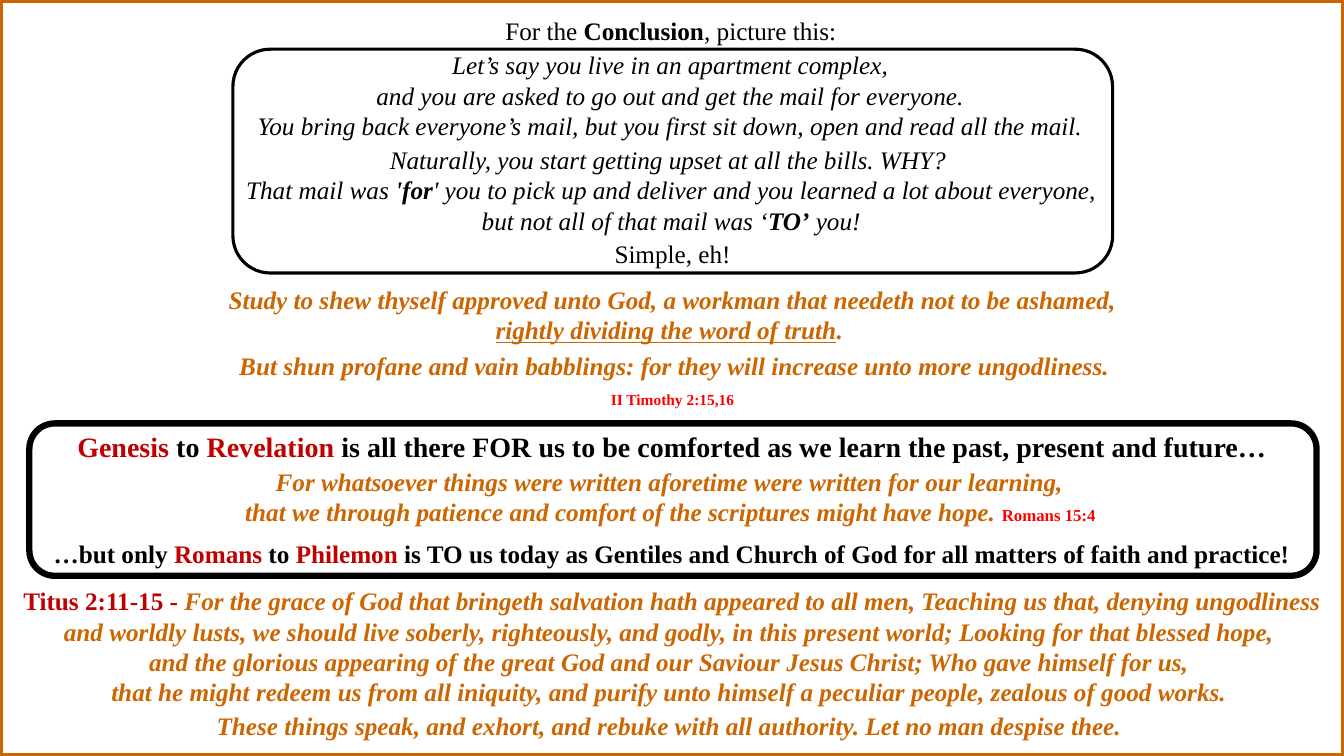
from collections import namedtuple
from pptx import Presentation
from pptx.dml.color import RGBColor as Rgb
from pptx.enum.shapes import MSO_SHAPE as Shape
from pptx.enum.text import MSO_ANCHOR as Anchor, MSO_AUTO_SIZE as Auto, PP_ALIGN as Align
from pptx.util import Cm, Pt

# Content: each block is a list of lines, each line a list of (text, style)
HEAD = [[("For the ", "plain"), ("Conclusion", "strong"), (", picture this: ", "plain")]]
MAIL = [
    [("Let’s say you live in an apartment complex, ", "tale")],
    [("and you are asked to go out and get the mail for everyone. ", "tale")],
    [("You bring back everyone’s mail, but you first sit down, open and read all the mail. ", "tale")],
]
BILLS = [
    [("Naturally, you start getting upset at all the bills. WHY? ", "tale")],
    [("That mail was ", "tale"), ("'for", "stress"),
     ("' you to pick up and deliver and you learned a lot about everyone, ", "tale")],
    [("but not all of that mail was ‘", "tale"), ("TO’", "stress"), (" you!", "tale")],
]
SIMPLE = [[("Simple, eh! ", "plain")]]
STUDY = [
    [("Study to shew thyself approved unto God, a workman that needeth not to be ashamed,", "verse")],
    [("rightly dividing the word of truth", "under"), (". ", "verse")],
]
SHUN = [[(" But shun profane and vain babblings: for they will increase unto more ungodliness.",
          "verse")]]
SOURCE = [[("II Timothy 2:15,16", "cite")]]
ALL = [[("Genesis", "bigbook"), (" to ", "big"), ("Revelation", "bigbook"),
        (" is all there FOR us to be comforted as we learn the past, present and future…", "big")]]
HOPE = [
    [("For whatsoever things were written aforetime were written for our learning, ", "verse")],
    [("that we through patience and comfort of the scriptures might have hope. ", "verse"),
     ("Romans 15:4 ", "ref")],
]
ONLY = [[("…but only ", "strong"), ("Romans", "book"), (" to ", "strong"), ("Philemon", "book"),
         (" is TO us today as Gentiles and Church of God for all matters of faith and practice!",
          "strong")]]
TITUS = [
    [("Titus 2:11-15 - ", "book"),
     ("For the grace of God that bringeth salvation hath appeared to all men, Teaching us that, "
      "denying ungodliness and worldly lusts, we should live soberly, righteously, and godly, "
      "in this present world; Looking for that blessed hope, ", "verse")],
    [("and the glorious appearing of the great God and our Saviour Jesus Christ; "
      "Who gave himself for us, ", "verse")],
    [("that he might redeem us from all iniquity, and purify unto himself a peculiar people, "
      "zealous of good works. ", "verse")],
]
SPEAK = [[("These things speak, and exhort, and rebuke with all authority. "
           "Let no man despise thee. ", "verse")]]

# Places in cm: left, top, width, rows, text
TITLE = (5.82, 0.25, 22.33, 1, HEAD)
BLOCKS = [
    (6.1, 1.12, 21.74, 3, MAIL),
    (5.94, 3.51, 21.95, 3, BILLS),
    (14.63, 5.87, 4.8, 1, SIMPLE),
    (5.11, 7.04, 23.67, 2, STUDY),
    (5.08, 8.71, 23.67, 1, SHUN),
    (15.1, 9.7, 3.7, 1, SOURCE),
    (0.25, 10.69, 33.38, 1, ALL),
    (5.23, 11.61, 23.44, 2, HOPE),
    (0.94, 13.44, 31.98, 1, ONLY),
    (0.25, 14.63, 33.38, 4, TITUS),
    (4.39, 17.78, 25.1, 1, SPEAK),
]
WIDE, HIGH = 33.87, 19.05

# Theme: colours, and styles as size, colour, bold, italic, underline
Style = namedtuple("Style", "size color bold italic under", defaults=(False, False, False))


class Theme:
    font = "Times New Roman"
    black, red, cite, gold = "000000", "C00000", "FF0000", "CC6600"
    styles = {
        "plain": Style(18, black),
        "strong": Style(18, black, True),
        "tale": Style(18, black, False, True),
        "stress": Style(18, black, True, True),
        "verse": Style(18, gold, True, True),
        "under": Style(18, gold, True, True, True),
        "book": Style(18, red, True),
        "big": Style(20, black, True),
        "bigbook": Style(20, red, True),
        "ref": Style(12, cite, True),
        "cite": Style(11, cite, True),
    }


# Frames: shape, left, top, width, height in cm, colour, line in points
FRAMES = [
    (Shape.RECTANGLE, 0, 0, WIDE, HIGH, Theme.gold, 4.5),
    (Shape.ROUNDED_RECTANGLE, 5.87, 1.24, 22.17, 5.64, Theme.black, 2.25),
    (Shape.ROUNDED_RECTANGLE, 0.74, 10.67, 32.44, 3.84, Theme.black, 4.5),
]


def place(box, left, top, width, rows, lines):
    size = Theme.styles[lines[0][0][1]].size
    box.left, box.top, box.width = Cm(left), Cm(top), Cm(width)
    box.height = Cm(0.25) + Pt(size * 1.2 * rows)
    fill(box.text_frame, lines)


def fill(frame, lines):
    frame.word_wrap = True
    frame.auto_size = Auto.NONE
    frame.vertical_anchor = Anchor.TOP
    frame.margin_left = frame.margin_right = Cm(0.25)
    frame.margin_top = frame.margin_bottom = Cm(0.13)
    for num, line in enumerate(lines):
        para = frame.add_paragraph() if num else frame.paragraphs[0]
        para.alignment = Align.CENTER
        for text, name in line:
            style = Theme.styles[name]
            run = para.add_run()
            run.text = text
            font = run.font
            font.name, font.size = Theme.font, Pt(style.size)
            font.color.rgb = Rgb.from_string(style.color)
            font.bold, font.italic, font.underline = style.bold, style.italic, style.under


def outline(slide, kind, left, top, width, height, color, weight):
    shape = slide.shapes.add_shape(kind, Cm(left), Cm(top), Cm(width), Cm(height))
    shape.shadow.inherit = False
    shape.fill.background()
    shape.line.color.rgb = Rgb.from_string(color)
    shape.line.width = Pt(weight)


def main():
    deck = Presentation()
    deck.slide_width, deck.slide_height = Cm(WIDE), Cm(HIGH)
    slide = deck.slides.add_slide(deck.slide_layouts[5])

    # Heading and text blocks
    place(slide.shapes.title, *TITLE)
    for block in BLOCKS:
        place(slide.shapes.add_textbox(0, 0, 0, 0), *block)

    # Slide border and rounded frames
    for frame in FRAMES:
        outline(slide, *frame)
    deck.save("out.pptx")


if __name__ == "__main__":
    main()
